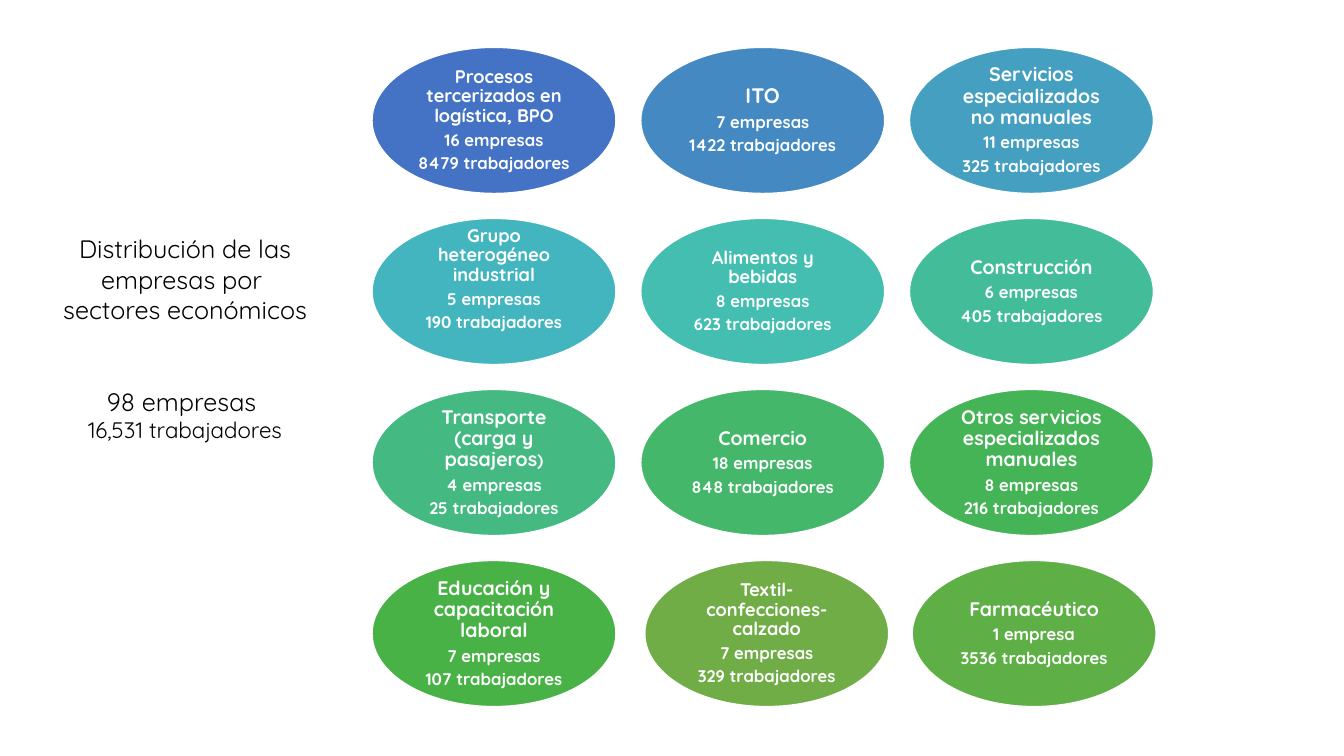
from pptx import Presentation, util as u
from pptx.dml.color import RGBColor
from pptx.enum import shapes, text

SLIDE_W, SLIDE_H = u.Inches(13.333), u.Inches(7.5)
FONT = "Quicksand"
COLUMNS, ROWS = 3, 4

# Boxes as left, top, width, height in percent of the slide
SUMMARY_BOX = (4.05, 27.33, 19.43, 40.4)
SECTORS_BOX = (27.68, 6.27, 58.14, 87.2)
OVAL_SIZE = (18.15, 19.33)

# Title runs (text, size), companies, workers, fill, shift to the right
SECTORS = [
    ([("Procesos tercerizados en logística, BPO", 13)], "16 empresas", "8479 trabajadores", "4472C4", 0),
    ([("ITO", 15)], "7 empresas", "1422 trabajadores", "4489C2", 0),
    ([("Servicios especializados no manuales", 14)], "11 empresas", "325 trabajadores", "449FC1", 0),
    ([("Grupo heterogéneo industrial", 13)], "5 empresas", "190 trabajadores", "43B5BF", 0),
    ([("Alimentos y bebidas", 13)], "8 empresas", "623 trabajadores", "43BEB1", 0),
    ([("Construcción", 14)], "6 empresas", "405 trabajadores", "43BC99", 0),
    ([("Transporte (carga y pasajeros", 14), (")", 12)], "4 empresas", "25 trabajadores", "44B982", 0),
    ([("Comercio", 14)], "18 empresas", "848 trabajadores", "44B76B", 0),
    ([("Otros servicios especializados manuales", 14)], "8 empresas", "216 trabajadores", "45B456", 0),
    ([("Educación y capacitación laboral", 14)], "7 empresas", "107 trabajadores", "49B246", 0),
    ([("Textil-confecciones-calzado", 13)], "7 empresas", "329 trabajadores", "70AD47", 0.3),
    ([("Farmacéutico", 14)], "1 empresa", "3536 trabajadores", "5DAF46", 0.2),
]
RAISED_SECTOR = 3  # its text sits one line higher in the oval


def color(hex_code):
    return RGBColor.from_string(hex_code)


def place(left, top, width, height):
    return [int(share / 100 * side) for share, side in
            zip((left, top, width, height), (SLIDE_W, SLIDE_H) * 2)]


def write(frame, index, runs, ink="000000", bold=False, spacing=None, before=0, after=0):
    """Write one centred paragraph made of (text, size) runs."""
    line = frame.paragraphs[0] if index == 0 else frame.add_paragraph()
    line.alignment = text.PP_ALIGN.CENTER
    line.line_spacing = spacing
    line.space_before, line.space_after = u.Pt(before), u.Pt(after)
    for words, size in runs:
        run = line.add_run()
        run.text = words
        run.font.name, run.font.size = FONT, u.Pt(size)
        run.font.bold = bold
        run.font.color.rgb = color(ink)


def add_summary(slide, box):
    summary = slide.shapes.add_textbox(*place(*box))
    # Turned box with counter-turned text, so that it reads upright
    summary.rotation = 90
    frame = summary.text_frame
    frame.word_wrap = True
    frame._txBody.bodyPr.set("vert", "vert270")
    lines = [("Distribución de las empresas por ", 18, 0),
             ("sectores económicos", 18, 0),
             ("98 empresas ", 18, 44),
             ("16,531 trabajadores", 16, 0)]
    for index, (words, size, before) in enumerate(lines):
        write(frame, index, [(words, size)], before=before)


def add_sector(slide, box, title, companies, workers, fill, raised):
    oval = slide.shapes.add_shape(shapes.MSO_SHAPE.OVAL, *place(*box))
    oval.shadow.inherit = False
    oval.fill.solid()
    oval.fill.fore_color.rgb = color(fill)
    oval.line.color.rgb = color("FFFFFF")
    oval.line.width = u.Pt(1)
    frame = oval.text_frame
    frame.word_wrap = True
    frame.vertical_anchor = text.MSO_ANCHOR.MIDDLE
    margin = u.Inches(0.05 if title[0][1] == 13 else 0.06)
    frame.margin_left = frame.margin_right = frame.margin_top = margin
    frame.margin_bottom = margin + (u.Inches(0.24) if raised else 0)
    for index, runs in enumerate((title, [(companies, 12)], [(workers, 12)])):
        write(frame, index, runs, ink="FFFFFF", bold=True, spacing=0.9,
              after=0.3 * runs[0][1])


def add_sectors(slide, box):
    left, top, width, height = box
    oval_w, oval_h = OVAL_SIZE
    step_x = (width - oval_w) / (COLUMNS - 1)
    step_y = (height - oval_h) / (ROWS - 1)
    for index, (title, companies, workers, fill, shift) in enumerate(SECTORS):
        row, column = divmod(index, COLUMNS)
        oval_box = (left + column * step_x + shift, top + row * step_y, oval_w, oval_h)
        add_sector(slide, oval_box, title, companies, workers, fill, index == RAISED_SECTOR)


def main():
    deck = Presentation()
    deck.slide_width, deck.slide_height = SLIDE_W, SLIDE_H
    slide = deck.slides.add_slide(deck.slide_layouts[6])
    add_sectors(slide, SECTORS_BOX)
    add_summary(slide, SUMMARY_BOX)
    deck.save("out.pptx")


if __name__ == "__main__":
    main()
